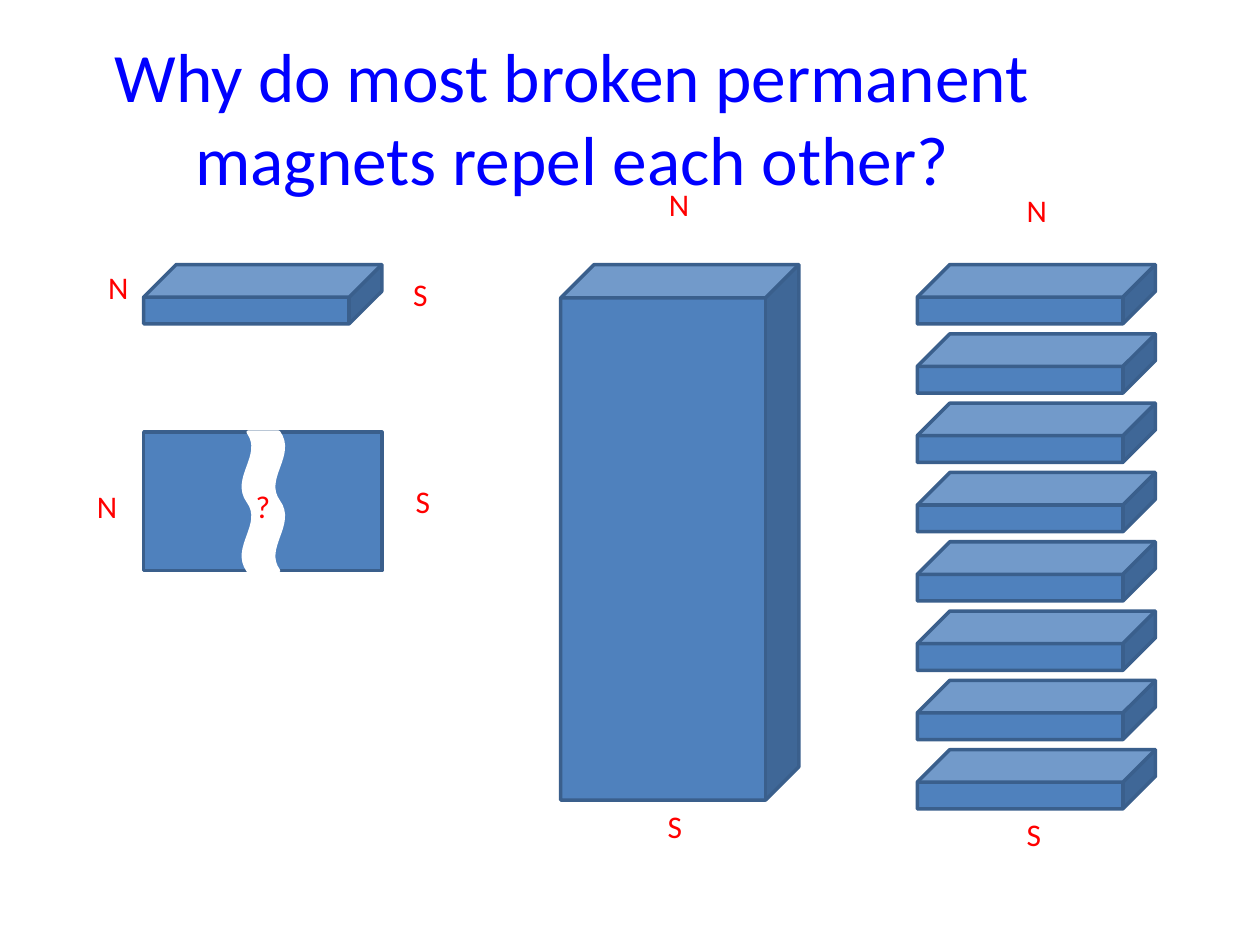
from pptx import Presentation
from pptx.dml.color import RGBColor
from pptx.enum.shapes import MSO_SHAPE
from pptx.enum.text import MSO_ANCHOR, MSO_AUTO_SIZE, PP_ALIGN
from pptx.util import Inches, Pt

CUBE, RECTANGLE, WAVE = MSO_SHAPE.CUBE, MSO_SHAPE.RECTANGLE, MSO_SHAPE.DOUBLE_WAVE
MIDDLE, CENTER = MSO_ANCHOR.MIDDLE, PP_ALIGN.CENTER
NO_FIT, GROW = MSO_AUTO_SIZE.NONE, MSO_AUTO_SIZE.SHAPE_TO_FIT_TEXT

BLUE, EDGE, WHITE, RED, TITLE_BLUE = "4F81BD", "3A5F8C", "FFFFFF", "FF0000", "0000FF"
MAGNET_WIDTH, SLAB_HEIGHT, SLAB_STEP, SLAB_COUNT = 1.89, 0.47, 0.55, 8
BAR_LEFT, TALL_LEFT, STACK_LEFT, TOP = 1.14, 4.45, 7.28, 2.1
SLAB_DEPTH, TALL_DEPTH = 0.55, 0.14


def color(value):
    return RGBColor.from_string(value)


class MagnetSlide:
    """Holds the text style and the current slide, and draws its elements."""

    def __init__(self, slide, font="Calibri"):
        self.slide = slide
        self.font = font

    def fill_text(self, frame, text, size, ink, formats):
        for name, value in formats.items():
            setattr(frame, name, value)
        paragraph = frame.paragraphs[0]
        run = paragraph.add_run()
        run.text = text
        for name, value in {"name": self.font, "size": Pt(size)}.items():
            setattr(run.font, name, value)
        run.font.color.rgb = color(ink)
        return paragraph

    def title(self, text, box):
        heading = self.slide.shapes.title
        for name, value in zip(("left", "top", "width", "height"), box):
            setattr(heading, name, Inches(value))
        formats = {"vertical_anchor": MIDDLE, "auto_size": NO_FIT, "word_wrap": True}
        self.fill_text(heading.text_frame, text, 39.6, TITLE_BLUE, formats).alignment = CENTER

    def solid(self, kind, box, fill=BLUE, edge=EDGE, adjustments=(), rotation=0, parent=None):
        shapes = (parent or self.slide).shapes
        solid = shapes.add_shape(kind, *map(Inches, box))
        solid.shadow.inherit = False
        solid.rotation = rotation
        solid.fill.solid()
        solid.fill.fore_color.rgb = color(fill)
        solid.line.color.rgb = color(edge)
        solid.line.width = Pt(2)
        for index, value in enumerate(adjustments):
            solid.adjustments[index] = value

    def slab(self, left, top, parent=None):
        box = (left, top, MAGNET_WIDTH, SLAB_HEIGHT)
        self.solid(CUBE, box, adjustments=[SLAB_DEPTH], parent=parent)

    def stack(self, left, top):
        group = self.slide.shapes.add_group_shape()
        for level in range(SLAB_COUNT):
            self.slab(left, top + level * SLAB_STEP, group)

    def label(self, text, left, top):
        width = 0.36 if text == "N" else 0.32
        box = self.slide.shapes.add_textbox(*map(Inches, (left, top, width, 0.4)))
        self.fill_text(box.text_frame, text, 18, RED, {"word_wrap": False, "auto_size": GROW})


def main():
    deck = Presentation()
    deck.slide_width, deck.slide_height = Inches(10), Inches(7.5)
    magnets = MagnetSlide(deck.slides.add_slide(deck.slide_layouts[5]))

    magnets.solid(RECTANGLE, (BAR_LEFT, 3.43, MAGNET_WIDTH, 1.1))
    magnets.title("Why do most broken permanent magnets repel each other?", (0.04, 0.3, 9, 1.25))
    magnets.solid(CUBE, (TALL_LEFT, TOP, MAGNET_WIDTH, 4.25), adjustments=[TALL_DEPTH])
    magnets.stack(STACK_LEFT, TOP)
    magnets.slab(BAR_LEFT, TOP)
    magnets.solid(WAVE, (1.54, 3.82, 1.1, 0.32), WHITE, WHITE, [0.125, 0], 90)

    poles = {
        "N": [(0.76, 2.08), (0.67, 3.82), (5.21, 1.42), (8.05, 1.47)],
        "S": [(3.18, 2.13), (3.2, 3.78), (5.2, 6.36), (8.05, 6.42)],
        "?": [(1.93, 3.82)],
    }
    for pole, places in poles.items():
        for left, top in places:
            magnets.label(pole, left, top)

    deck.save("out.pptx")


if __name__ == "__main__":
    main()
